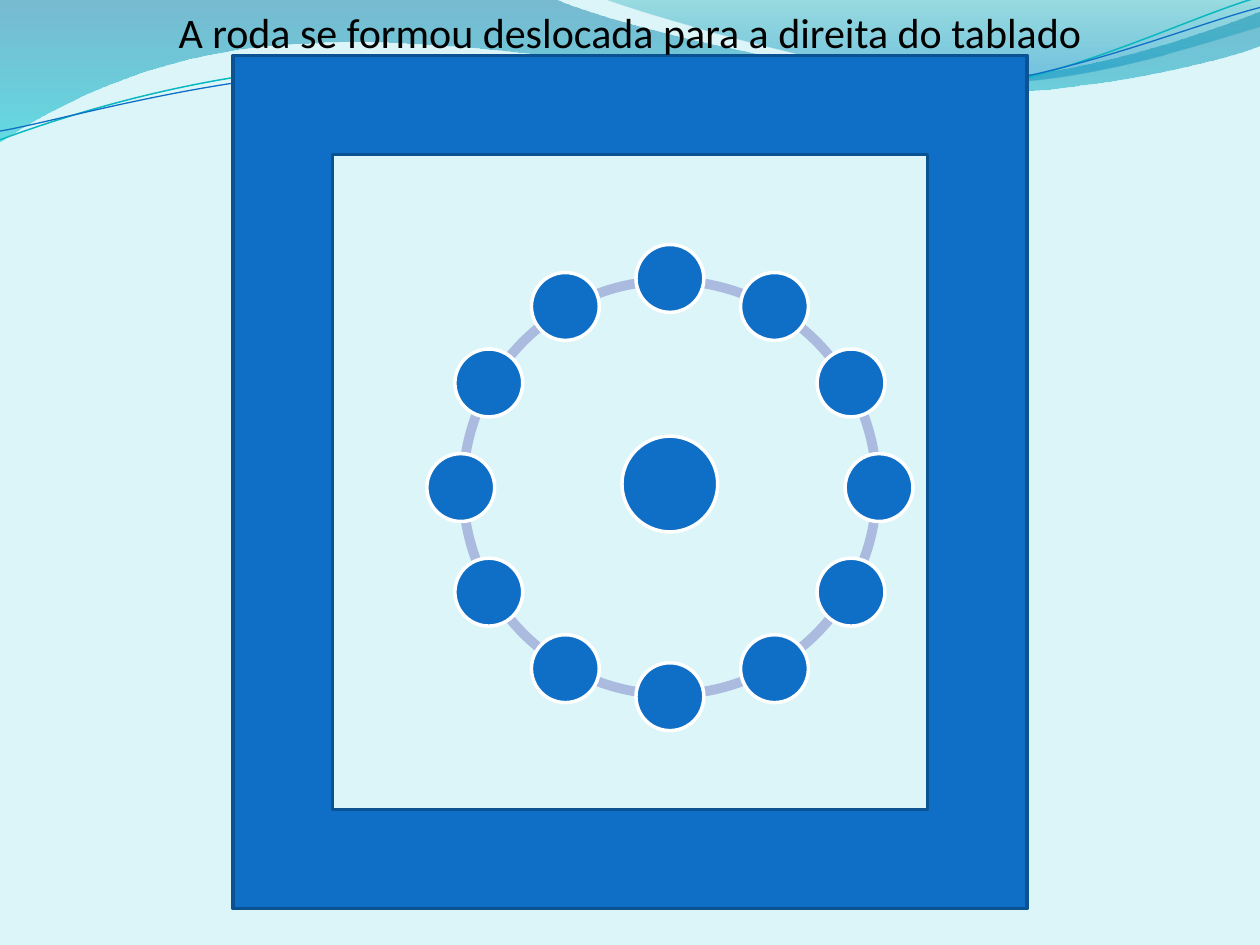
from math import cos, radians, sin

from lxml.etree import Element, SubElement
from pptx import Presentation
from pptx.dml.color import RGBColor
from pptx.enum.shapes import MSO_SHAPE as Preset
from pptx.enum.text import PP_ALIGN as Align
from pptx.oxml.ns import qn
from pptx.util import Pt

PALE = RGBColor(0xDB, 0xF5, 0xF9)
BLUE = RGBColor(0x0F, 0x6F, 0xC6)
NAVY = RGBColor(0x0B, 0x52, 0x92)
LILAC = RGBColor(0xAB, 0xBB, 0xDF)
TEAL = RGBColor(0x0A, 0xB8, 0xBF)
OCEAN = RGBColor(0x00, 0x74, 0xA1)
AQUA = RGBColor(0x00, 0xC6, 0xCF)
LAGOON = RGBColor(0x00, 0xA1, 0xA9)
SKY = RGBColor(0x00, 0x8B, 0xBF)
WHITE = RGBColor(0xFF, 0xFF, 0xFF)
BLACK = RGBColor(0x00, 0x00, 0x00)

LEFT_WAVE = [
    [(0, 0)],
    [(316.8, -0.7)],
    [(342.7, 12.2), (478.1, 45.4), (545.8, 45.4)],
    [(614.2, 45.4), (689.8, 18.7), (720, 6.5)],
    [(720.7, 25.9)],
    [(707.8, 31.7), (626.4, 54.7), (537.1, 54)],
    [(447.8, 54), (275, 20.2), (185, 24.5)],
    [(92.9, 25.9), (33.1, 59.8), (-0.7, 81.4)],
]
RIGHT_WAVE = [
    [(344.9, -0.7)],
    [(366.5, 7.9), (491, 44.6), (553.7, 46.8)],
    [(616.3, 49.7), (691.9, 23), (720, 15.1)],
    [(720, 0)],
]
TEAL_THREAD = [
    [(0, 79.9)],
    [(34.6, 67), (113.8, 41), (199.4, 37.4)],
    [(284.4, 33.8), (427, 64.1), (513.4, 57.6)],
    [(599.8, 51.1), (675.4, 10.8), (718.6, -1.4)],
]
BLUE_THREAD = [
    [(0, 74.9)],
    [(33.8, 69.1), (118.1, 43.9), (203.8, 40.3)],
    [(290.2, 36.7), (429.8, 60.5), (516.2, 54)],
    [(601.9, 48.2), (677.5, 15.1), (720, 4.3)],
]


def turn(segments, degrees, x, y):
    c, s = cos(radians(degrees)), sin(radians(degrees))
    return [
        [(x + (a - x) * c - (b - y) * s, y + (a - x) * s + (b - y) * c) for a, b in segment]
        for segment in segments
    ]


class Stage:
    """Draws styled elements on the current slide, with lengths in points."""

    font = "Calibri"

    def __init__(self, slide):
        self.slide = slide
        self.shapes = slide.shapes
        slide.background.fill.solid()
        slide.background.fill.fore_color.rgb = PALE

    def outline(self, shape, color, width):
        if color is None:
            shape.line.fill.background()
        else:
            shape.line.color.rgb = color
            shape.line.width = Pt(width)

    def preset(self, kind, left, top, width, height, fill, line=None, adjust=()):
        shape = self.shapes.add_shape(kind, Pt(left), Pt(top), Pt(width), Pt(height))
        shape.shadow.inherit = False
        shape.fill.solid()
        shape.fill.fore_color.rgb = fill
        self.outline(shape, line, 2)
        for index, value in enumerate(adjust):
            shape.adjustments[index] = value

    def dot(self, x, y, size):
        self.preset(Preset.OVAL, x - size / 2, y - size / 2, size, size, BLUE, WHITE)

    def curve(self, segments, close):
        start, *anchors = [(Pt(x), Pt(y)) for *_, (x, y) in segments]
        builder = self.shapes.build_freeform(*start)
        builder.add_line_segments(anchors, close=close)
        shape = builder.convert_to_shape()
        shape.shadow.inherit = False
        sides = list(shape.element.spPr.iter(qn("a:lnTo")))
        for side, (*handles, _) in zip(sides, segments[1:]):
            if handles:
                side.tag = qn("a:cubicBezTo")
            for index, (x, y) in enumerate(handles):
                place = {"x": str(Pt(x) - shape.left), "y": str(Pt(y) - shape.top)}
                side.insert(index, Element(qn("a:pt"), place))
        return shape

    def wave(self, segments, stops):
        shape = self.curve(segments, True)
        self.outline(shape, None, 0)
        shape.fill.gradient()
        shape.fill.gradient_angle = 270
        for stop, (position, color, _) in zip(shape.fill.gradient_stops, stops):
            stop.position = position
            stop.color.rgb = color
        tints = shape.element.spPr.iter(qn("a:srgbClr"))
        for tint, (_, _, opacity) in zip(list(tints), stops):
            SubElement(tint, qn("a:alpha"), val=str(opacity * 1000))

    def thread(self, segments, middle, color, width, tilt=-2.7):
        shape = self.curve(turn(segments, -tilt, 359.5, middle), False)
        shape.rotation = tilt
        shape.fill.background()
        self.outline(shape, color, width)

    def title(self, text, left, top, width, height, size):
        frame = self.shapes.add_textbox(Pt(left), Pt(top), Pt(width), Pt(height)).text_frame
        frame.word_wrap = True
        paragraph = frame.paragraphs[0]
        paragraph.alignment = Align.CENTER
        run = paragraph.add_run()
        run.text = text
        run.font.name = self.font
        run.font.size = Pt(size)
        run.font.color.rgb = BLACK

    def circle(self, x, y, diameter, dancers, dot_orbit, dot_size):
        step = 360 / dancers
        for index in range(dancers):
            begin, end = index * step, (index + 1) * step % 360
            self.preset(
                Preset.BLOCK_ARC, x - diameter / 2, y - diameter / 2, diameter, diameter,
                LILAC, adjust=(begin * 0.6, end * 0.6, 0.023),
            )
        self.dot(x, y - 2, 54.7)
        for index in range(dancers):
            angle = radians(index * step - 90)
            self.dot(x + dot_orbit * cos(angle), y + dot_orbit * sin(angle), dot_size)


def main():
    deck = Presentation()
    deck.slide_width, deck.slide_height = Pt(720), Pt(540)
    stage = Stage(deck.slides.add_slide(deck.slide_layouts[6]))
    stage.wave(LEFT_WAVE, [(0, OCEAN, 45), (1, AQUA, 55)])
    stage.wave(RIGHT_WAVE, [(0, LAGOON, 30), (0.8, SKY, 45)])
    stage.thread(TEAL_THREAD, 41.4, TEAL, 0.85)
    stage.thread(BLUE_THREAD, 42.5, BLUE, 0.75)
    stage.preset(Preset.FRAME, 133.2, 31.7, 453.6, 487.6, BLUE, NAVY)
    stage.circle(382.8, 278.6, 242, 12, 119.5, 38.8)
    stage.title("A roda se formou deslocada para a direita do tablado", 0, 0, 720, 37.4, 24)
    deck.save("out.pptx")


if __name__ == "__main__":
    main()
